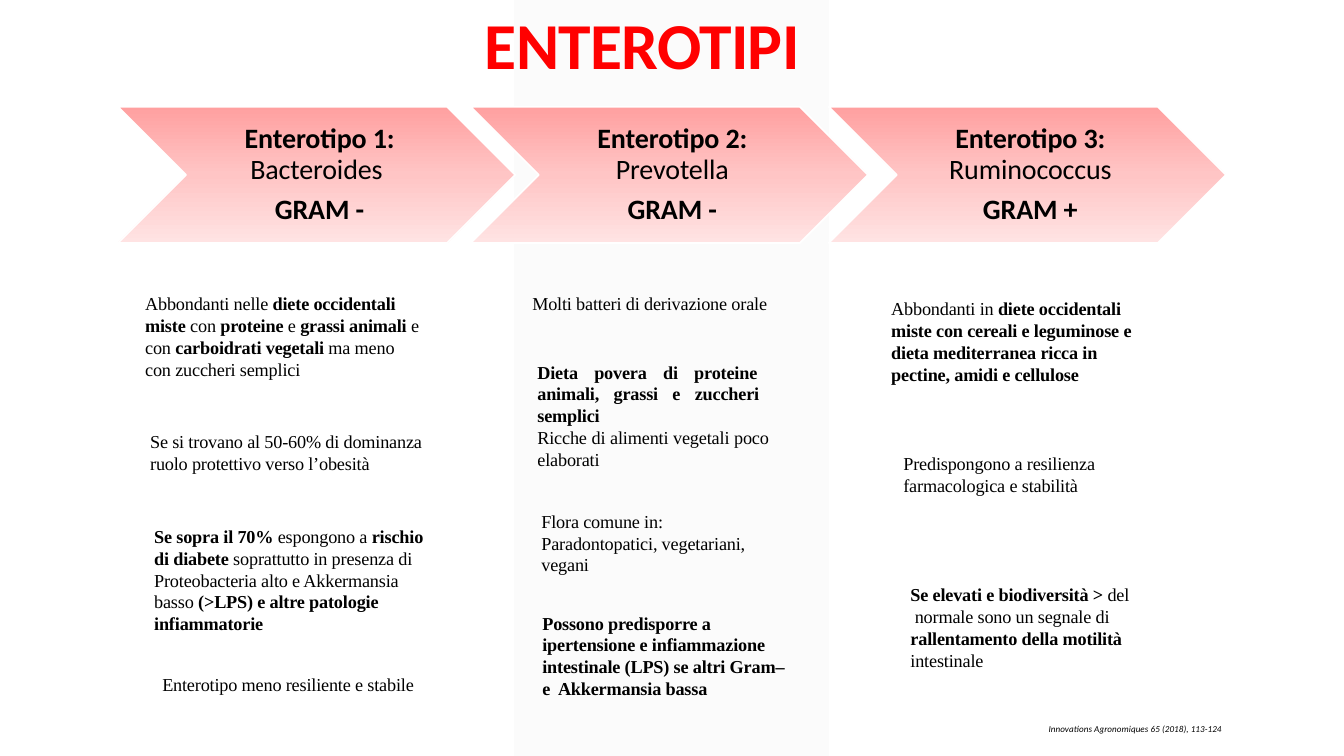
from copy import deepcopy
from dataclasses import dataclass

from lxml import etree
from pptx import Presentation
from pptx.dml.color import RGBColor
from pptx.enum.shapes import MSO_SHAPE
from pptx.enum.text import MSO_ANCHOR, MSO_AUTO_SIZE, PP_ALIGN
from pptx.oxml.ns import qn
from pptx.util import Inches, Pt

CHEVRON, BAND = MSO_SHAPE.CHEVRON, MSO_SHAPE.PARALLELOGRAM
TOP, MIDDLE = MSO_ANCHOR.TOP, MSO_ANCHOR.MIDDLE
LEFT, CENTER, JUSTIFY = PP_ALIGN.LEFT, PP_ALIGN.CENTER, PP_ALIGN.JUSTIFY
GROW, FIXED = MSO_AUTO_SIZE.SHAPE_TO_FIT_TEXT, MSO_AUTO_SIZE.NONE

BLACK = RGBColor(0x00, 0x00, 0x00)
WHITE = RGBColor(0xFF, 0xFF, 0xFF)
RED = RGBColor(0xFF, 0x00, 0x00)
PALE_GREY = RGBColor(0xF2, 0xF2, 0xF2)
PINKS = (RGBColor(0xFF, 0xA0, 0xA0), RGBColor(0xFF, 0xC5, 0xC5), RGBColor(0xFF, 0xE3, 0xE3))

HEADING_FONT, BODY_FONT = "Calibri", "Times New Roman"
SLIDE_WIDTH, SLIDE_HEIGHT = Inches(13.33), Inches(7.5)


@dataclass
class Style:
    font: str
    size: float
    tracking: float
    color: RGBColor = BLACK
    italic: bool = False
    align: PP_ALIGN = LEFT
    leading: float = 1.0
    before: float = 0
    after: float = 0


@dataclass
class Enterotype:
    left: float
    name: str
    genus: str
    gram: str


@dataclass
class Note:
    """Place in percent of the slide; asterisks switch bold on and off."""
    left: float
    top: float
    width: float
    height: float
    paragraphs: list[str]
    align: PP_ALIGN = LEFT


TITLE = Style(HEADING_FONT, 46.8, -0.5, RED, align=CENTER, leading=0.9)
HEADING = Style(HEADING_FONT, 20, -0.1, align=CENTER, leading=0.9, after=7)
CITATION = Style(HEADING_FONT, 6.5, 0.05, italic=True, before=1.2)

ENTEROTYPES = [
    Enterotype(8.78, "Enterotipo 1: ", "Bacteroides ", "GRAM -"),
    Enterotype(35.03, "Enterotipo 2: ", "Prevotella", "GRAM -"),
    Enterotype(61.67, "Enterotipo 3: ", "Ruminococcus", "GRAM +"),
]

NOTES = [
    # Enterotype 1
    Note(10.73, 38.53, 20.78, 11.87, [
        "Abbondanti nelle *diete occidentali  miste *con *proteine *e *grassi animali *"
        "e  con *carboidrati vegetali *ma meno  con zuccheri semplici"]),
    Note(11.1, 56.8, 20.78, 6.13, [
        "Se si trovano al 50-60% di dominanza  ruolo protettivo verso l’obesità"]),
    Note(11.4, 69.33, 20.48, 14.8, [
        "*Se sopra il 70% *espongono a *rischio  di diabete *soprattutto in presenza di  "
        "Proteobacteria alto e Akkermansia  basso *(>LPS) e altre patologie  infiammatorie*"]),
    Note(12, 88.93, 19.88, 3.07, ["Enterotipo meno resiliente e stabile"]),
    # Enterotype 2
    Note(39.53, 38.53, 18.38, 3.07, ["Molti batteri di derivazione orale"]),
    Note(39.91, 47.6, 17.63, 14.8, [
        "*Dieta povera di proteine  animali, grassi e zuccheri  semplici*",
        "Ricche di alimenti vegetali poco  elaborati"], JUSTIFY),
    Note(40.21, 67.33, 16.2, 9.07, [
        "Flora comune in:", "Paradontopatici, vegetariani,  vegani"]),
    Note(40.28, 80.8, 18.45, 11.87, [
        "*Possono predisporre a*", "*ipertensione e infiammazione*",
        "*intestinale (LPS) se altri Gram– e  Akkermansia bassa*"]),
    # Enterotype 3
    Note(66.24, 39.2, 18.53, 11.87, [
        "Abbondanti in *diete occidentali  miste con cereali e leguminose e  "
        "dieta mediterranea ricca in*",
        "*pectine, amidi e cellulose*"]),
    Note(67.14, 59.73, 15, 6.13, ["Predispongono a resilienza  farmacologica e stabilità"]),
    Note(67.67, 77.07, 16.58, 11.87, [
        "*Se elevati e biodiversità > *del  normale sono un segnale di  "
        "*rallentamento della motilità  *intestinale"]),
]


def place(left: float, top: float, width: float, height: float) -> tuple[int, ...]:
    """Turn percentages of the slide into lengths."""
    sides = (SLIDE_WIDTH, SLIDE_HEIGHT, SLIDE_WIDTH, SLIDE_HEIGHT)
    return tuple(round(side * share / 100)
                 for side, share in zip(sides, (left, top, width, height)))


def style_span(span, style: Style, bold: bool) -> None:
    font = span.font
    font.name, font.size = style.font, Pt(style.size)
    font.bold, font.italic = bold, style.italic
    font.color.rgb = style.color
    font._element.set("spc", str(round(style.tracking * 100)))


def write(frame, paragraphs: list[str], style: Style) -> None:
    for index, marked in enumerate(paragraphs):
        para = frame.add_paragraph() if index else frame.paragraphs[0]
        para.alignment, para.line_spacing = style.align, style.leading
        para.space_before = Pt(0 if index else style.before)
        para.space_after = Pt(style.after)
        for part, words in enumerate(marked.split("*")):
            if words:
                span = para.add_run()
                span.text = words
                style_span(span, style, bold=part % 2 == 1)


def add_text(shapes, area: tuple[int, ...], paragraphs: list[str], style: Style,
             insets: tuple[float, ...] = (0.01, 0.01, 0, 0), anchor=TOP, fit=GROW) -> None:
    frame = shapes.add_textbox(*area).text_frame
    frame.word_wrap, frame.auto_size, frame.vertical_anchor = True, fit, anchor
    (frame.margin_left, frame.margin_top,
     frame.margin_right, frame.margin_bottom) = map(Inches, insets)
    write(frame, paragraphs, style)


def add_band(page) -> None:
    band = page.shapes.add_shape(BAND, *place(38.26, 0, 23.41, 100))
    band.adjustments[0] = 0
    band.shadow.inherit = False
    band.line.fill.background()
    band.fill.solid()
    band.fill.fore_color.rgb = PALE_GREY
    color = band.element.find(".//" + qn("a:srgbClr"))
    etree.SubElement(color, qn("a:alpha"), val="30000")
    # Send behind the title
    page.shapes.element.insert(2, band.element)


def add_enterotype(page, kind: Enterotype) -> None:
    group = page.shapes.add_group_shape()
    chevron = group.shapes.add_shape(CHEVRON, *place(kind.left, 14.13, 29.56, 18))
    chevron.shadow.inherit = False
    chevron.line.color.rgb, chevron.line.width = WHITE, Pt(1.25)
    chevron.fill.gradient()
    chevron.fill.gradient_angle = 270
    stop_list = chevron.element.find(".//" + qn("a:gsLst"))
    stop_list.append(deepcopy(stop_list[0]))
    for index, stop in enumerate(chevron.fill.gradient_stops):
        stop.position, stop.color.rgb = index / 2, PINKS[index]
    add_text(group.shapes, place(kind.left + 5.05, 14.13, 19.43, 18),
             [f"*{kind.name}*{kind.genus}", f"*{kind.gram}*"], HEADING,
             (0.09, 0.03, 0.03, 0.03), MIDDLE, FIXED)


def main() -> None:
    deck = Presentation()
    deck.slide_width, deck.slide_height = SLIDE_WIDTH, SLIDE_HEIGHT
    page = deck.slides.add_slide(deck.slide_layouts[5])

    # Title over the pale band
    title = page.shapes.title
    title.left, title.top, title.width, title.height = place(13.35, 1.07, 68.87, 36.27)
    title.text_frame.vertical_anchor, title.text_frame.auto_size = TOP, FIXED
    write(title.text_frame, ["*ENTEROTIPI*"], TITLE)
    add_band(page)

    # Chevron headings
    for kind in ENTEROTYPES:
        add_enterotype(page, kind)

    # Notes under each heading
    for note in NOTES:
        style = Style(BODY_FONT, 13, -0.1, align=note.align, before=0.9)
        area = place(note.left, note.top, note.width, note.height)
        add_text(page.shapes, area, note.paragraphs, style)

    # Citation
    add_text(page.shapes, place(77.94, 95.47, 15.9, 1.73),
             ["Innovations Agronomiques 65 (2018), 113-124"], CITATION, (0.01, 0.02, 0, 0))

    deck.save("out.pptx")


if __name__ == "__main__":
    main()
